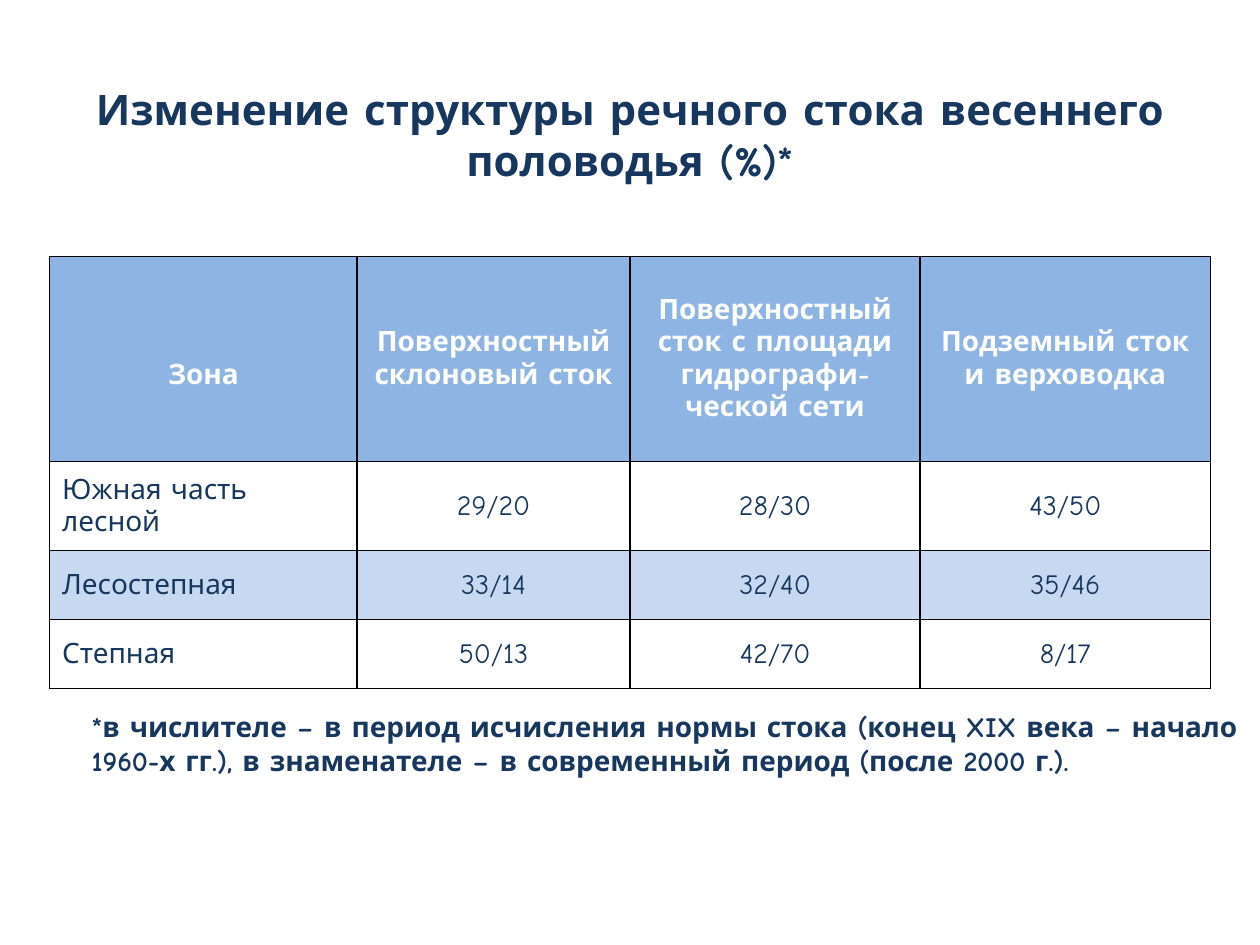
from lxml import etree
from pptx import Presentation
from pptx.dml.color import RGBColor
from pptx.enum.text import MSO_ANCHOR, PP_ALIGN
from pptx.oxml.ns import qn
from pptx.util import Cm, Pt

LEFT, CENTER = PP_ALIGN.LEFT, PP_ALIGN.CENTER
MIDDLE = MSO_ANCHOR.MIDDLE
FONT = "Comic Neue"
COLORS = {
    "navy": "17375E",
    "header": "8EB4E3",
    "band": "C6D9F1",
    "white": "FFFFFF",
    "border": "000000",
}
TITLE = "Изменение структуры речного стока весеннего половодья (%)*"
NOTE = (
    "*в числителе – в период исчисления нормы стока (конец XIX века – начало "
    "1960-х гг.), в знаменателе – в современный период (после 2000 г.)."
)
ROWS = [
    ["Зона", "Поверхностный склоновый сток",
     "Поверхностный сток с площади гидрографи-ческой сети",
     "Подземный сток и верховодка"],
    ["Южная часть лесной", "29/20", "28/30", "43/50"],
    ["Лесостепная", "33/14", "32/40", "35/46"],
    ["Степная", "50/13", "42/70", "8/17"],
]
ROW_FILLS = ["header", None, "band", None]
COLUMN_WIDTHS = [6.2, 5.5, 5.85, 5.85]
ROW_HEIGHTS = [4.13, 1.8, 1.39, 1.39]


def write_text(frame, text, size, color, bold, alignment):
    paragraph = frame.paragraphs[0]
    paragraph.text = text
    paragraph.alignment = alignment
    font = paragraph.font
    font.name = FONT
    font.size = Pt(size)
    font.bold = bold
    font.color.rgb = RGBColor.from_string(COLORS[color])


def add_bold_text(slide, box, text, size, alignment):
    shape = slide.shapes.add_textbox(*map(Cm, box))
    frame = shape.text_frame
    frame.word_wrap = True
    frame.vertical_anchor = MIDDLE
    write_text(frame, text, size, "navy", True, alignment)


def add_borders(cell):
    properties = cell._tc.get_or_add_tcPr()
    for index, side in enumerate(("a:lnL", "a:lnR", "a:lnT", "a:lnB")):
        line = etree.Element(qn(side), w=str(Pt(1)))
        fill = etree.SubElement(line, qn("a:solidFill"))
        etree.SubElement(fill, qn("a:srgbClr"), val=COLORS["border"])
        properties.insert(index, line)


def fill_cell(cell, text, fill, is_header, alignment):
    cell.vertical_anchor = MIDDLE
    if fill:
        cell.fill.solid()
        cell.fill.fore_color.rgb = RGBColor.from_string(COLORS[fill])
    else:
        cell.fill.background()
    color = "white" if is_header else "navy"
    write_text(cell.text_frame, text, 16, color, is_header, alignment)
    add_borders(cell)


def add_runoff_table(slide, left, top):
    table = slide.shapes.add_table(
        len(ROWS), len(COLUMN_WIDTHS), Cm(left), Cm(top),
        Cm(sum(COLUMN_WIDTHS)), Cm(sum(ROW_HEIGHTS)),
    ).table
    for column, width in zip(table.columns, COLUMN_WIDTHS):
        column.width = Cm(width)
    for row_index, (texts, fill) in enumerate(zip(ROWS, ROW_FILLS)):
        table.rows[row_index].height = Cm(ROW_HEIGHTS[row_index])
        is_header = row_index == 0
        for column_index, text in enumerate(texts):
            alignment = CENTER if is_header or column_index else LEFT
            cell = table.cell(row_index, column_index)
            fill_cell(cell, text, fill, is_header, alignment)
    table.cell(0, 0).margin_top = Cm(0.78)


def main():
    presentation = Presentation()
    presentation.slide_width = Cm(25.4)
    presentation.slide_height = Cm(19.05)
    slide = presentation.slides.add_slide(presentation.slide_layouts[6])
    add_bold_text(slide, (0.6, 1.55, 24.2, 2.31), TITLE, 24, CENTER)
    add_runoff_table(slide, 1, 5.17)
    add_bold_text(slide, (1.6, 14.17, 23.8, 1.63), NOTE, 16, LEFT)
    presentation.save("out.pptx")


if __name__ == "__main__":
    main()
